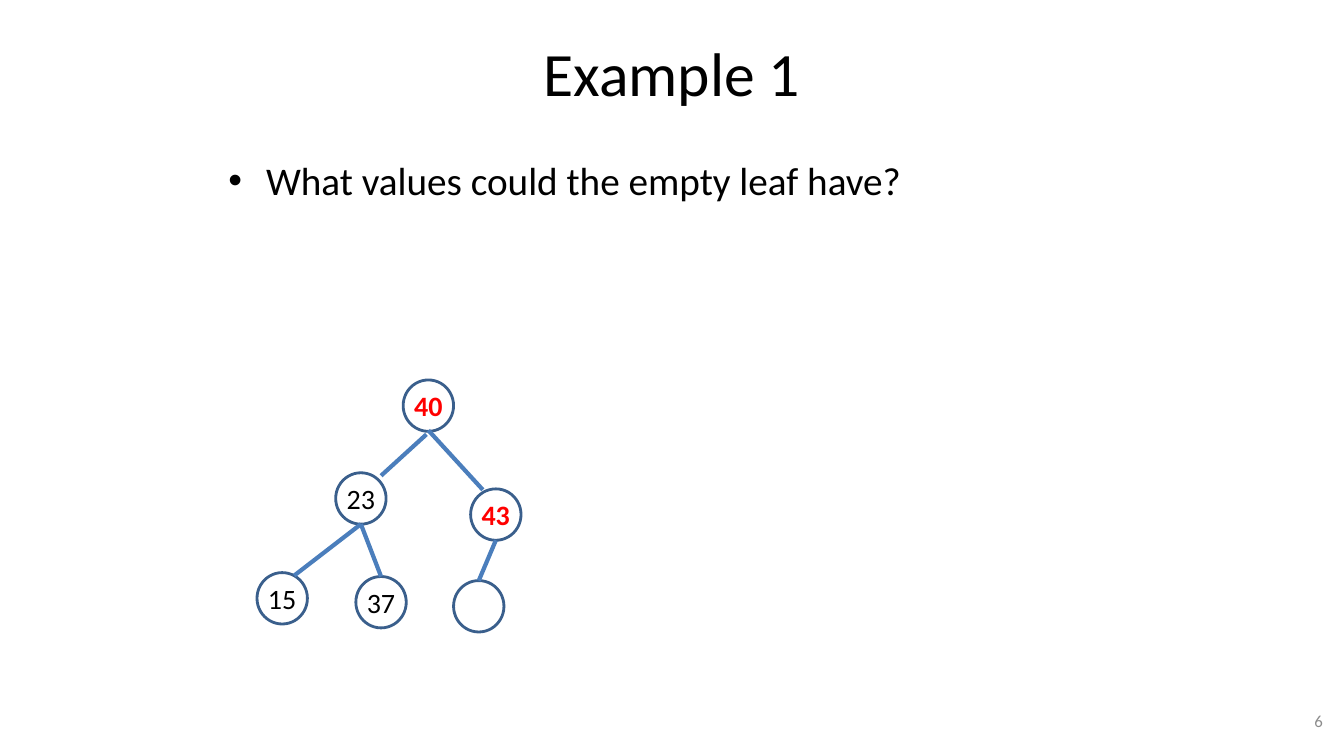
from dataclasses import dataclass

from lxml import etree
from pptx import Presentation
from pptx.dml.color import RGBColor
from pptx.enum.shapes import MSO_CONNECTOR, MSO_SHAPE
from pptx.enum.text import MSO_ANCHOR, PP_ALIGN
from pptx.oxml.ns import qn
from pptx.util import Pt

LEFT, CENTER, RIGHT = PP_ALIGN.LEFT, PP_ALIGN.CENTER, PP_ALIGN.RIGHT
TOP, MIDDLE = MSO_ANCHOR.TOP, MSO_ANCHOR.MIDDLE
OVAL, STRAIGHT = MSO_SHAPE.OVAL, MSO_CONNECTOR.STRAIGHT


@dataclass(frozen=True)
class Theme:
    font: str = "Calibri"
    ink: str = "000000"
    key: str = "FF0000"
    faint: str = "8C8C8C"
    ring: str = "3A5F8C"
    edge: str = "4B7EBC"
    title: int = 44
    body: int = 28
    node: int = 20
    foot: int = 12


theme = Theme()


def write(shape, text, size, color, align, anchor, bold=False):
    """Put one formatted paragraph into the shape and return it."""
    frame = shape.text_frame
    frame.vertical_anchor = anchor
    para = frame.paragraphs[0]
    para.alignment = align
    run = para.add_run()
    run.text = text
    run.font.color.rgb = RGBColor.from_string(color)
    style = {"name": theme.font, "size": Pt(size), "bold": bold}
    for name, value in style.items():
        setattr(run.font, name, value)
    return para


deck = Presentation()
deck.slide_width, deck.slide_height = Pt(960), Pt(540)
slide = deck.slides.add_slide(deck.slide_layouts[6])
shapes = slide.shapes

# Title, question and slide number
texts = [
    ((48, 6, 864, 90), "Example 1", theme.title, theme.ink, CENTER, MIDDLE),
    ((156, 108, 648, 133), "What values could the empty leaf have?",
     theme.body, theme.ink, LEFT, TOP),
    ((728, 500.4, 224, 28.8), "6", theme.foot, theme.faint, RIGHT, MIDDLE),
]
paras = []
for area, *look in texts:
    box = shapes.add_textbox(*map(Pt, area))
    box.text_frame.word_wrap = True
    paras.append(write(box, *look))

# Bullet of the question
ask = paras[1]
ask.space_before = Pt(5.6)
props = ask._p.get_or_add_pPr()
props.set("marL", str(Pt(27)))
props.set("indent", str(Pt(-27)))
font = etree.SubElement(props, qn("a:buFont"))
font.set("typeface", "Arial")
mark = etree.SubElement(props, qn("a:buChar"))
mark.set("char", "•")

# Tree nodes: left, top, value, on the searched path
WIDE, HIGH = 36, 36.7
nodes = [
    (288, 271.4, "40", True),
    (239.8, 337.7, "23", False),
    (336.2, 349.2, "43", True),
    (183.6, 409, "15", False),
    (254.2, 411.8, "37", False),
    (324, 414.7, "", False),
]
for left, top, value, hot in nodes:
    node = shapes.add_shape(OVAL, Pt(left), Pt(top), Pt(WIDE), Pt(HIGH))
    node.shadow.inherit = False
    node.fill.background()
    node.line.color.rgb = RGBColor.from_string(theme.ring)
    node.line.width = Pt(2)
    frame = node.text_frame
    frame.word_wrap = False
    for side in ("left", "right", "top", "bottom"):
        setattr(frame, f"margin_{side}", 0)
    if value:
        color = theme.key if hot else theme.ink
        write(node, value, theme.node, color, CENTER, MIDDLE, hot)

# Tree edges: start and end points
edges = [
    (304.6, 310.3, 272.2, 339.8),
    (306, 307.4, 344.9, 349.9),
    (272.2, 411.8, 257.8, 374.4),
    (257.8, 374.4, 210.2, 411.1),
    (354.2, 385.9, 342, 414.7),
]
for ends in edges:
    edge = shapes.add_connector(STRAIGHT, *map(Pt, ends))
    edge.line.color.rgb = RGBColor.from_string(theme.edge)
    edge.line.width = Pt(3)
    etree.SubElement(edge._element.spPr, qn("a:effectLst"))

deck.save("out.pptx")
